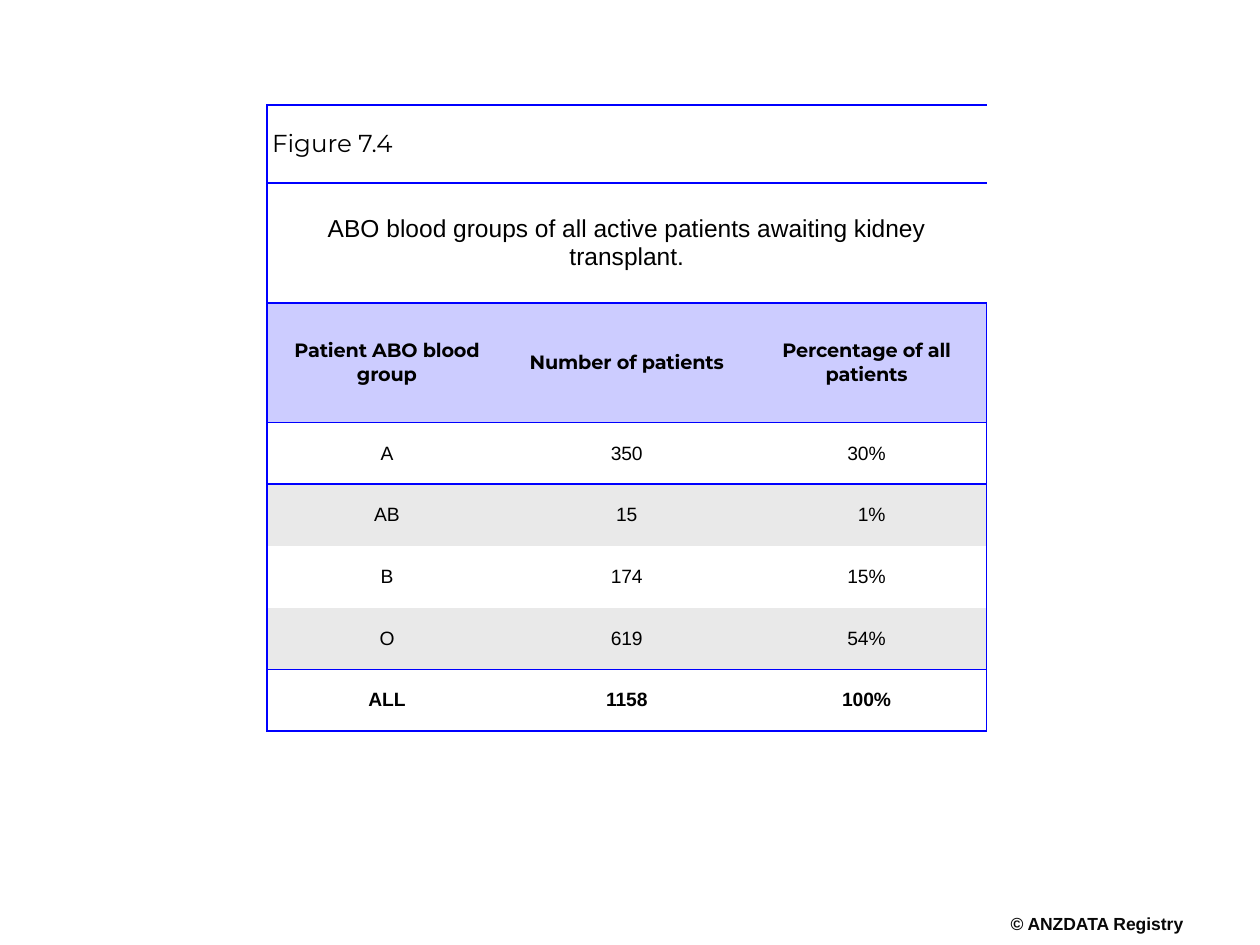
from lxml.etree import SubElement
from pptx import Presentation
from pptx.dml.color import RGBColor
from pptx.enum.text import MSO_ANCHOR as Anchor, MSO_AUTO_SIZE as AutoSize, PP_ALIGN as Align
from pptx.oxml.ns import qn
from pptx.util import Inches, Pt

WIDTH, HEIGHT = 10, 7.5
RULE_BLUE, HEADER_LILAC, BAND_GREY = "0000FF", "CCCCFF", "E9E9E9"
NO_GRID_STYLE = "{2D5ABB26-0587-4C30-8999-92F81FD0307C}"

FIGURE_LABEL = "Figure 7.4"
CAPTION = "ABO blood groups of all active patients awaiting kidney transplant."
HEADINGS = ["Patient ABO blood group", "Number of patients", "Percentage of all patients"]
GROUPS = [
    ["A", "350", "30%"],
    ["AB", "15", "1%"],
    ["B", "174", "15%"],
    ["O", "619", "54%"],
]
TOTALS = ["ALL", "1158", "100%"]
ROW_HEIGHTS = [0.62, 0.95, 0.95] + [0.49] * 5
RULED_EDGES = {0, 1, 2, 3, 7, 8}  # horizontal grid lines that are drawn


def colour(value):
    return RGBColor.from_string(value)


def write(frame, text, size=11, font="Arial", bold=False, ink="000000",
          align=Align.CENTER, tracking=None, spacing=None):
    paragraph = frame.paragraphs[0]
    paragraph.alignment = align
    if spacing:
        paragraph.line_spacing = spacing
    run = paragraph.add_run()
    run.text = text
    run.font.size, run.font.name, run.font.bold = Pt(size), font, bold
    run.font.color.rgb = colour(ink)
    if tracking:
        run.font._element.set("spc", str(tracking))


def format_cell(cell, sides, fill=None, margins=(0.04, 0.04)):
    """Rule the given sides (L, R, T, B), then fill the cell and set its margins."""
    properties = cell._tc.get_or_add_tcPr()
    for side in "LRTB":
        if side in sides:
            line = SubElement(properties, qn(f"a:ln{side}"), w=str(Pt(1)))
            solid = SubElement(line, qn("a:solidFill"))
            SubElement(solid, qn("a:srgbClr"), val=RULE_BLUE)
    if fill:
        cell.fill.solid()
        cell.fill.fore_color.rgb = colour(fill)
    else:
        cell.fill.background()
    cell.vertical_anchor = Anchor.MIDDLE
    across, down = (Inches(margin) for margin in margins)
    cell.margin_left = cell.margin_right = across
    cell.margin_top = cell.margin_bottom = down


def blood_group_table(slide, left, top, width, heights):
    columns = len(HEADINGS)
    table = slide.shapes.add_table(
        len(heights), columns, Inches(left), Inches(top),
        Inches(width), Inches(sum(heights))).table
    table.first_row = table.horz_banding = False
    table._tbl.tblPr.find(qn("a:tableStyleId")).text = NO_GRID_STYLE
    for column in table.columns:
        column.width = Inches(width / columns)
    for row, height in zip(table.rows, heights):
        row.height = Inches(height)

    # Rules, fills and margins follow from the place in the grid
    fills = ["FFFFFF", "FFFFFF", HEADER_LILAC, None, BAND_GREY, None, BAND_GREY, None]
    for r, fill in enumerate(fills):
        for c in range(columns):
            sides = {"L": c == 0, "R": c == columns - 1,
                     "T": r in RULED_EDGES, "B": r + 1 in RULED_EDGES}
            margins = (0.39, 0.02) if r == 1 else (0.04, 0.04)
            format_cell(table.cell(r, c), {s for s in sides if sides[s]}, fill, margins)

    # Label and caption span the full width
    for r in (0, 1):
        table.cell(r, 0).merge(table.cell(r, columns - 1))
    write(table.cell(0, 0).text_frame, FIGURE_LABEL, size=14,
          font="Montserrat", align=Align.LEFT)
    write(table.cell(1, 0).text_frame, CAPTION, size=14)

    # Headings, groups and totals
    for r, values in enumerate([HEADINGS, *GROUPS, TOTALS], start=2):
        heading = values is HEADINGS
        for c, value in enumerate(values):
            cell = table.cell(r, c)
            write(cell.text_frame, value, font="Montserrat" if heading else "Arial",
                  bold=heading or values is TOTALS, tracking=-10)
            if value == "1%":  # line its digit up with the units above and below
                cell.margin_left = Inches(0.12)


def copyright_line(slide, left, top, width, height):
    frame = slide.shapes.add_textbox(
        Inches(left), Inches(top), Inches(width), Inches(height)).text_frame
    frame.margin_left = frame.margin_right = frame.margin_top = frame.margin_bottom = 0
    frame.word_wrap = False
    frame.auto_size = AutoSize.SHAPE_TO_FIT_TEXT
    write(frame, "© ANZDATA Registry", size=10, bold=True, ink="080808", spacing=0.85)


def main():
    deck = Presentation()
    deck.slide_width, deck.slide_height = Inches(WIDTH), Inches(HEIGHT)
    slide = deck.slides.add_slide(deck.slide_layouts[6])
    copyright_line(slide, WIDTH * 0.8, HEIGHT * 0.97, 1.41, 0.17)
    blood_group_table(slide, 2.12, HEIGHT / 9, 5.71, ROW_HEIGHTS)
    deck.save("out.pptx")


if __name__ == "__main__":
    main()
